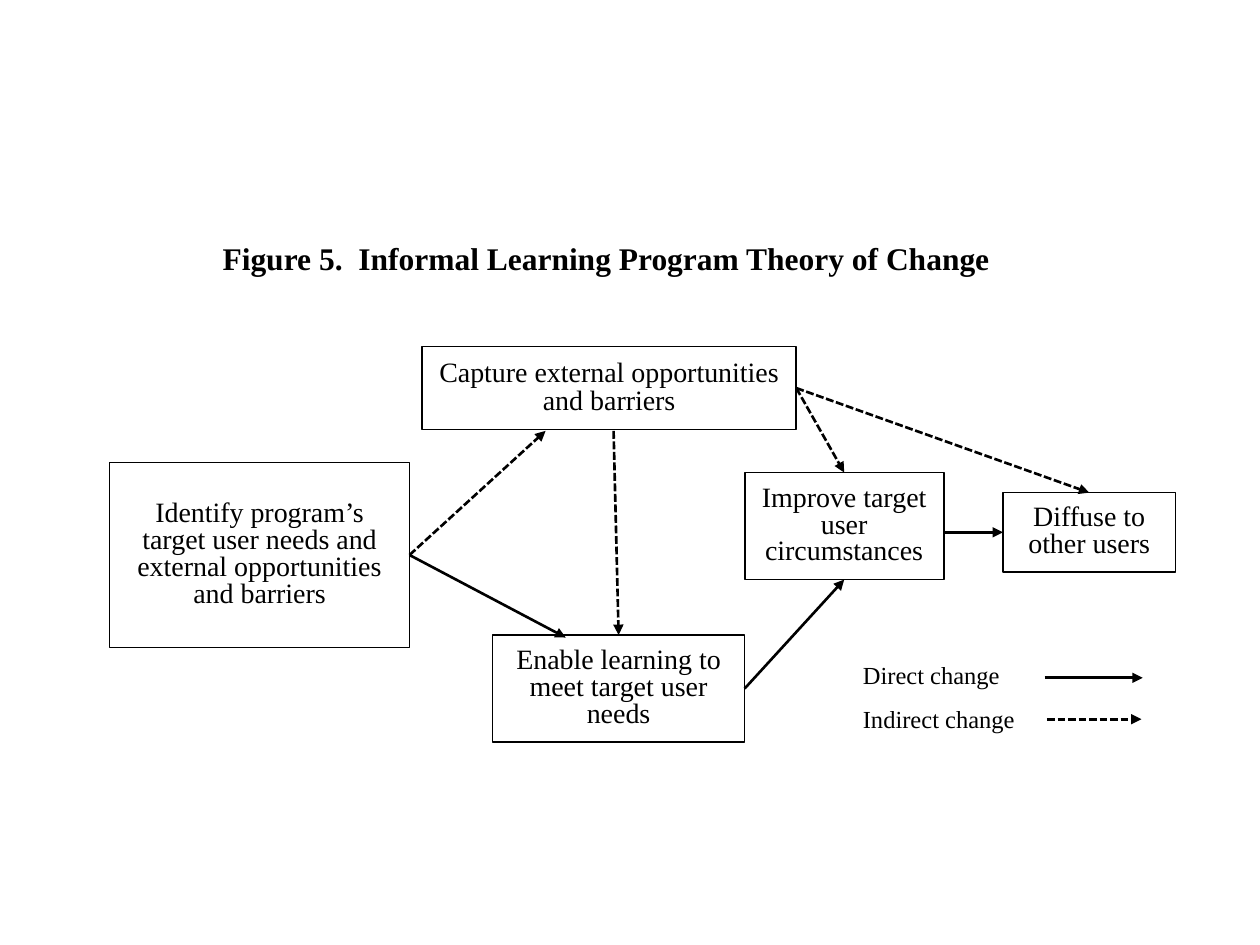
from pptx import Presentation
from pptx import util as u
from pptx.dml.color import RGBColor
from pptx.enum import dml, shapes, text
from pptx.oxml.ns import qn
from lxml import etree

Pt = u.Pt
TOP, LEFT, BOTTOM, RIGHT = range(4)
BLACK = "000000"
FONT = {"name": "Times New Roman", "size": Pt(16), "bold": False}
FRAME = {"word_wrap": True, "auto_size": text.MSO_AUTO_SIZE.NONE}


def color(value):
    return RGBColor.from_string(value)


def apply(obj, values):
    for name, value in values.items():
        setattr(obj, name, value)


def write(tf, lines, font, frame, para):
    apply(tf, {**FRAME, **frame})
    for i, line in enumerate(lines):
        p = tf.add_paragraph() if i else tf.paragraphs[0]
        apply(p, para)
        if i:
            p.space_before = Pt(5.5)
        r = p.add_run()
        r.text = line
        apply(r.font, {**FONT, **font})
        r.font.color.rgb = color(BLACK)


def add_title(s, box, title):
    sp = s.shapes.title
    apply(sp, dict(zip(("left", "top", "width", "height"), map(Pt, box))))
    write(sp.text_frame, [title], {"size": Pt(18), "bold": True},
          {"vertical_anchor": text.MSO_ANCHOR.TOP},
          {"alignment": text.PP_ALIGN.LEFT})


def add_step(s, box, label, spacing=0.8, inset=7.2):
    sp = s.shapes.add_shape(shapes.MSO_SHAPE.RECTANGLE, *map(Pt, box))
    sp.shadow.inherit = False
    sp.fill.background()
    sp.line.color.rgb = color(BLACK)
    sp.line.width = Pt(1)
    frame = {"vertical_anchor": text.MSO_ANCHOR.MIDDLE,
             "margin_left": Pt(7.2), "margin_right": Pt(7.2),
             "margin_top": Pt(inset), "margin_bottom": Pt(inset)}
    write(sp.text_frame, [label], {}, frame,
          {"alignment": text.PP_ALIGN.CENTER, "line_spacing": spacing})
    return sp


def add_arrow(s, start=(0, 0), end=(0, 0), begin=None, finish=None, dashed=False):
    c = s.shapes.add_connector(shapes.MSO_CONNECTOR.STRAIGHT,
                               *map(Pt, (*start, *end)))
    if begin:
        c.begin_connect(*begin)
    if finish:
        c.end_connect(*finish)
    c.line.color.rgb = color(BLACK)
    c.line.width = Pt(1.5)
    if dashed:
        c.line.dash_style = dml.MSO_LINE.SQUARE_DOT
        c.line._ln.find(qn("a:prstDash")).set("val", "sysDash")
    etree.SubElement(c.line._ln, qn("a:tailEnd"), type="triangle")
    etree.SubElement(c._element.spPr, qn("a:effectLst"))


def add_flow(s, box):
    x, y = box[:2]

    def at(left, top, width, height):
        return x + left, y + top, width, height

    identify = add_step(
        s, at(0, 66.24, 171.36, 105.84),
        "Identify program’s target user needs and external opportunities and barriers",
        inset=21.6)
    capture = add_step(s, at(178.56, 0, 213.84, 47.52),
                       "Capture external opportunities and barriers", 0.85)
    enable = add_step(s, at(218.88, 164.88, 144, 61.2),
                      "Enable learning to meet target user needs")
    improve = add_step(s, at(362.88, 72, 113.76, 61.2),
                       "Improve target user circumstances")
    diffuse = add_step(s, at(510.48, 83.52, 98.64, 45.36),
                       "Diffuse to other users")

    add_arrow(s, end=(x + 260.64, y + 166.32), begin=(identify, RIGHT))
    add_arrow(s, begin=(enable, RIGHT), finish=(improve, BOTTOM))
    add_arrow(s, start=(x + 476.64, y + 106.2), finish=(diffuse, LEFT))
    add_arrow(s, begin=(capture, RIGHT), finish=(improve, TOP), dashed=True)
    add_arrow(s, end=(x + 249.12, y + 48.24), begin=(identify, RIGHT), dashed=True)
    add_arrow(s, start=(x + 288, y + 48.24), finish=(enable, TOP), dashed=True)
    add_arrow(s, begin=(capture, RIGHT), finish=(diffuse, TOP), dashed=True)


def add_legend(s, box):
    x, y = box[:2]
    sp = s.shapes.add_textbox(*map(Pt, box))
    write(sp.text_frame, ["Direct change", "Indirect change"],
          {"size": Pt(14)}, {}, {"line_spacing": 1.2})
    add_arrow(s, (x + 110.9, y + 17.3), (x + 167, y + 17.3))
    add_arrow(s, (x + 112.3, y + 41), (x + 166.3, y + 41), dashed=True)


def main():
    prs = Presentation()
    prs.slide_width, prs.slide_height = Pt(720), Pt(540)
    s = prs.slides.add_slide(prs.slide_layouts[5])
    add_title(s, (120, 133.2, 492.5, 28.8),
              "Figure 5.  Informal Learning Program Theory of Change")
    add_flow(s, (62.64, 198, 609.12, 226.08))
    add_legend(s, (486, 370, 189.36, 54))
    prs.save("out.pptx")


if __name__ == "__main__":
    main()
